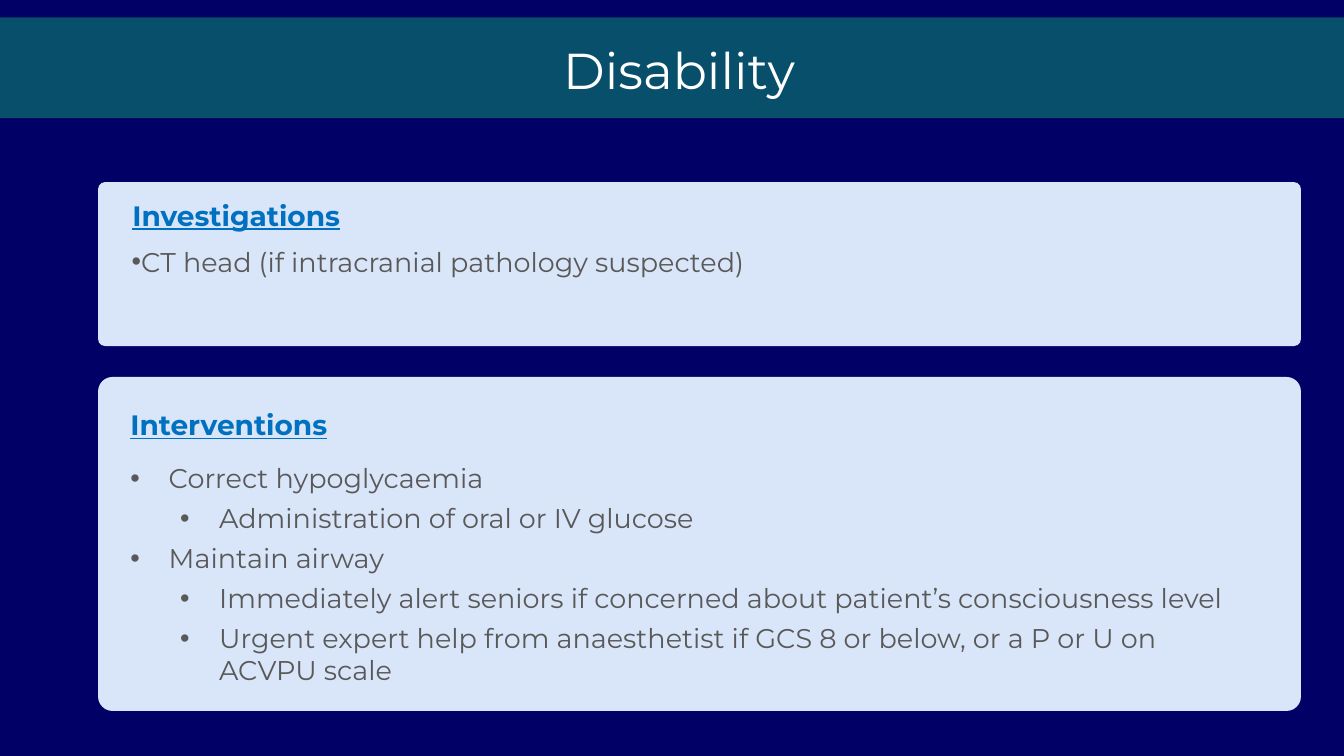
from typing import NamedTuple

from lxml import etree
from pptx import Presentation
from pptx.dml.color import RGBColor
from pptx.enum import shapes, text
from pptx.oxml.ns import qn
from pptx.shapes.autoshape import Shape
from pptx.slide import Slide
from pptx.util import Inches, Pt

COLOURS = {
    "background": "000066",
    "banner": "074F6A",
    "panel": "D9E5F8",
    "heading": "0070C0",
    "body": "595959",
    "title": "FFFFFF",
}
FONT = "Montserrat"


class Box(NamedTuple):
    left: float
    top: float
    width: float
    height: float


class Point(NamedTuple):
    words: str
    level: int = 0


class Panel(NamedTuple):
    frame: Box
    heading: str
    heading_box: Box
    points: list[Point]
    points_box: Box
    indent: float
    hanging: float


PANELS = [
    Panel(
        Box(1.46, 5.61, 17.9, 4.97),
        "Interventions",
        Box(1.79, 6, 3.77, 0.66),
        [
            Point("Correct hypoglycaemia"),
            Point("Administration of oral or IV glucose", 1),
            Point("Maintain airway"),
            Point("Immediately alert seniors if concerned about patient’s consciousness level", 1),
            Point("Urgent expert help from anaesthetist if GCS 8 or below, or a P or U on ACVPU scale", 1),
        ],
        Box(1.79, 6.8, 16.59, 3.53),
        indent=0.57,
        hanging=0.58,
    ),
    Panel(
        Box(1.46, 2.71, 17.9, 2.44),
        "Investigations",
        Box(1.82, 2.88, 3.92, 0.66),
        [Point("CT head (if intracranial pathology suspected)")],
        Box(1.81, 3.58, 16.59, 0.64),
        indent=0.12,
        hanging=0.13,
    ),
]
LEVEL_STEP = 0.75


def add_block(slide: Slide, kind: shapes.MSO_SHAPE, box: Box, colour: str) -> Shape:
    """Draw a filled preset shape without outline or shadow."""
    block = slide.shapes.add_shape(kind, *map(Inches, box))
    block.shadow.inherit = False
    block.fill.solid()
    block.fill.fore_color.rgb = RGBColor.from_string(COLOURS[colour])
    block.line.fill.background()
    return block


def set_bullet(paragraph, colour: str, indent: float, hanging: float) -> None:
    """Give a paragraph a coloured round bullet and a hanging indent."""
    properties = paragraph._p.get_or_add_pPr()
    properties.set("marL", str(Inches(indent)))
    properties.set("indent", str(-Inches(hanging)))
    bullet_colour = etree.SubElement(properties, qn("a:buClr"))
    etree.SubElement(bullet_colour, qn("a:srgbClr"), val=COLOURS[colour])
    etree.SubElement(properties, qn("a:buFont"), typeface="Arial")
    etree.SubElement(properties, qn("a:buChar"), char="•")


def add_text(slide: Slide, box: Box, points: list[Point], *, size: float, colour: str,
             bold: bool = False, underline: bool = False, centred: bool = False,
             indent: float = 0, hanging: float = 0) -> None:
    """Write paragraphs in one format, bulleted when a hanging indent is given."""
    frame = slide.shapes.add_textbox(*map(Inches, box)).text_frame
    frame.word_wrap = True
    frame.auto_size = text.MSO_AUTO_SIZE.SHAPE_TO_FIT_TEXT
    frame.margin_left = frame.margin_right = Inches(0.15)
    frame.margin_top = frame.margin_bottom = Inches(0.07)
    for index, point in enumerate(points):
        paragraph = frame.add_paragraph() if index else frame.paragraphs[0]
        paragraph.level = point.level
        paragraph.alignment = text.PP_ALIGN.CENTER if centred else text.PP_ALIGN.LEFT
        if index:
            paragraph.space_before = Pt(8)
        if hanging:
            set_bullet(paragraph, colour, indent + LEVEL_STEP * point.level, hanging)
        run = paragraph.add_run()
        run.text = point.words
        run.font.name = FONT
        run.font.size = Pt(size)
        run.font.bold = bold
        run.font.underline = underline
        run.font.color.rgb = RGBColor.from_string(COLOURS[colour])


def add_panel(slide: Slide, panel: Panel) -> None:
    """Draw a rounded panel with its heading and bullet points."""
    block = add_block(slide, shapes.MSO_SHAPE.ROUNDED_RECTANGLE, panel.frame, "panel")
    block.adjustments[0] = 0.043
    add_text(slide, panel.heading_box, [Point(panel.heading)], size=30,
             colour="heading", bold=True, underline=True)
    add_text(slide, panel.points_box, panel.points, size=29, colour="body",
             indent=panel.indent, hanging=panel.hanging)


def main() -> None:
    """Build the Disability slide and save it."""
    deck = Presentation()
    deck.slide_width, deck.slide_height = Inches(20), Inches(11.25)
    slide = deck.slides.add_slide(deck.slide_layouts[6])
    slide.background.fill.solid()
    slide.background.fill.fore_color.rgb = RGBColor.from_string(COLOURS["background"])
    for panel in PANELS:
        add_panel(slide, panel)
    add_block(slide, shapes.MSO_SHAPE.RECTANGLE, Box(0, 0.26, 20, 1.5), "banner")
    add_text(slide, Box(0.49, 0.51, 19.23, 1.06), [Point("Disability")], size=54,
             colour="title", centred=True)
    deck.save("out.pptx")


if __name__ == "__main__":
    main()
